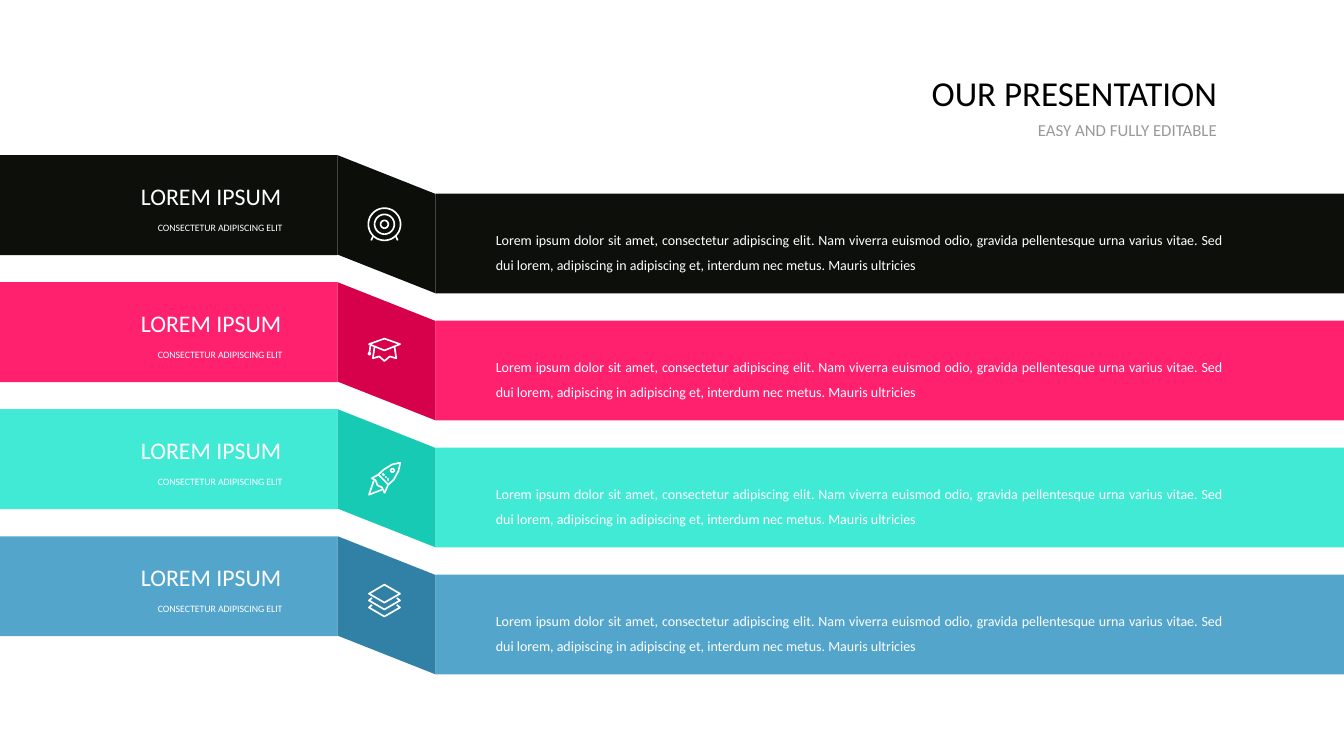
from math import cos, sin, tau
from pptx import Presentation
from pptx.dml.color import RGBColor
from pptx.enum.shapes import MSO_SHAPE as Kind
from pptx.enum.text import MSO_ANCHOR as Anchor, MSO_AUTO_SIZE as Fit, PP_ALIGN as Align
from pptx.util import Inches, Pt

TITLE = "OUR PRESENTATION"
SUB = "EASY AND FULLY EDITABLE"
LABEL = "LOREM IPSUM"
NOTE = "CONSECTETUR ADIPISCING ELIT"
BODY = (
    "Lorem ipsum dolor sit amet, consectetur adipiscing elit. Nam viverra "
    "euismod odio, gravida pellentesque urna varius vitae. Sed dui lorem, "
    "adipiscing in adipiscing et, interdum nec metus. Mauris ultricies"
)
FONT = "Calibri"
WHITE = "FFFFFF"


def ring(x, y, r, count=40):
    turns = [tau * i / count for i in range(count + 1)]
    return [(x + r * cos(a), y + r * sin(a)) for a in turns]


TARGET = [
    ring(163, 165, 160), ring(163, 165, 98), ring(163, 165, 38),
    [(50, 283), (32, 325)], [(276, 283), (294, 325)],
]
CAP = [
    [(10, 65), (163, 10), (318, 65), (163, 127), (10, 65)],
    [(65, 90), (48, 205), (112, 187), (163, 232), (216, 187), (280, 205), (263, 90)],
    [(24, 75), (14, 150)],
    ring(14, 160, 9),
]
ROCKET = [
    [(320, 10), (240, 28), (155, 80), (102, 130), (38, 165), (75, 185), (95, 235),
     (138, 255), (165, 310), (200, 230), (255, 180), (302, 95), (320, 10)],
    [(105, 130), (198, 225)],
    [(58, 188), (10, 328), (140, 278)],
    ring(243, 87, 17),
    ring(153, 130, 4), ring(177, 155, 4), ring(200, 178, 4),
]
LAYERS = [
    [(10, 100), (163, 10), (318, 100), (163, 188), (10, 100)],
    [(40, 142), (10, 167), (163, 256), (318, 167), (286, 142)],
    [(40, 210), (10, 237), (163, 326), (318, 237), (286, 210)],
]
ROWS = [
    ("0C0F0A", "0B0E09", TARGET, 0.52),
    ("FF206E", "D7004B", CAP, 0.55),
    ("41EAD4", "16CAB3", ROCKET, 0.52),
    ("53A5CC", "3180A6", LAYERS, 0.47),
]
TOP, STEP, TALL = 1.54, 1.26, 0.99


def color(code):
    return RGBColor.from_string(code)


def write(shape, text, size, code=WHITE, align=Align.RIGHT, lead=1, wrap=True):
    frame = shape.text_frame
    frame.word_wrap = wrap
    frame.auto_size = Fit.SHAPE_TO_FIT_TEXT
    frame.vertical_anchor = Anchor.TOP
    para = frame.paragraphs[0]
    para.alignment = align
    para.line_spacing = lead
    para.space_before = Pt(0)
    run = para.add_run()
    run.text = text
    run.font.name = FONT
    run.font.size = Pt(size)
    run.font.color.rgb = color(code)


def place(shape, *box):
    shape.left, shape.top, shape.width, shape.height = map(Inches, box)


def block(group, kind, code, *box):
    shape = group.shapes.add_shape(kind, *map(Inches, box))
    shape.shadow.inherit = False
    shape.fill.solid()
    shape.fill.fore_color.rgb = color(code)
    shape.line.fill.background()
    return shape


def draw(slide, strokes, left, top):
    pen = slide.shapes.build_freeform(*strokes[0][0], scale=914.4)
    for points in strokes:
        pen.move_to(*points[0])
        pen.add_line_segments(points[1:], close=False)
    icon = pen.convert_to_shape(Inches(left), Inches(top))
    icon.shadow.inherit = False
    icon.fill.background()
    icon.line.color.rgb = color(WHITE)
    icon.line.width = Pt(1.2)


def band(slide, top, main, dark, icon, drop):
    group = slide.shapes.add_group_shape()
    block(group, Kind.RECTANGLE, main, 0, top, 3.35, TALL)
    fold = block(group, Kind.PARALLELOGRAM, dark, 3.15, top + 0.2, 1.37, 0.97)
    fold.rotation = 270
    fold.adjustments[0] = 0.396
    block(group, Kind.RECTANGLE, main, 4.32, top + 0.38, 9.02, TALL)
    draw(slide, icon, 3.65, top + drop)

    def text(box, *args, **opts):
        write(slide.shapes.add_textbox(*map(Inches, box)), *args, **opts)

    text((4.82, top + 0.62, 7.4, 0.58), BODY, 10, align=Align.JUSTIFY, lead=1.5)
    text((1.01, top + 0.21, 1.88, 0.39), LABEL, 17)
    text((1.45, top + 0.61, 1.45, 0.22), NOTE, 7, wrap=False)


def main():
    deck = Presentation()
    deck.slide_width, deck.slide_height = Inches(13.33), Inches(7.5)
    slide = deck.slides.add_slide(deck.slide_layouts[0])
    title, sub = slide.placeholders
    place(title, 8.5, 0.66, 3.67, 0.52)
    write(title, TITLE, 25, "000000")
    place(sub, 9.23, 1.14, 2.94, 0.3)
    write(sub, SUB, 12, "999999")
    for i, row in enumerate(ROWS):
        band(slide, TOP + i * STEP, *row)
    deck.save("out.pptx")


if __name__ == "__main__":
    main()
